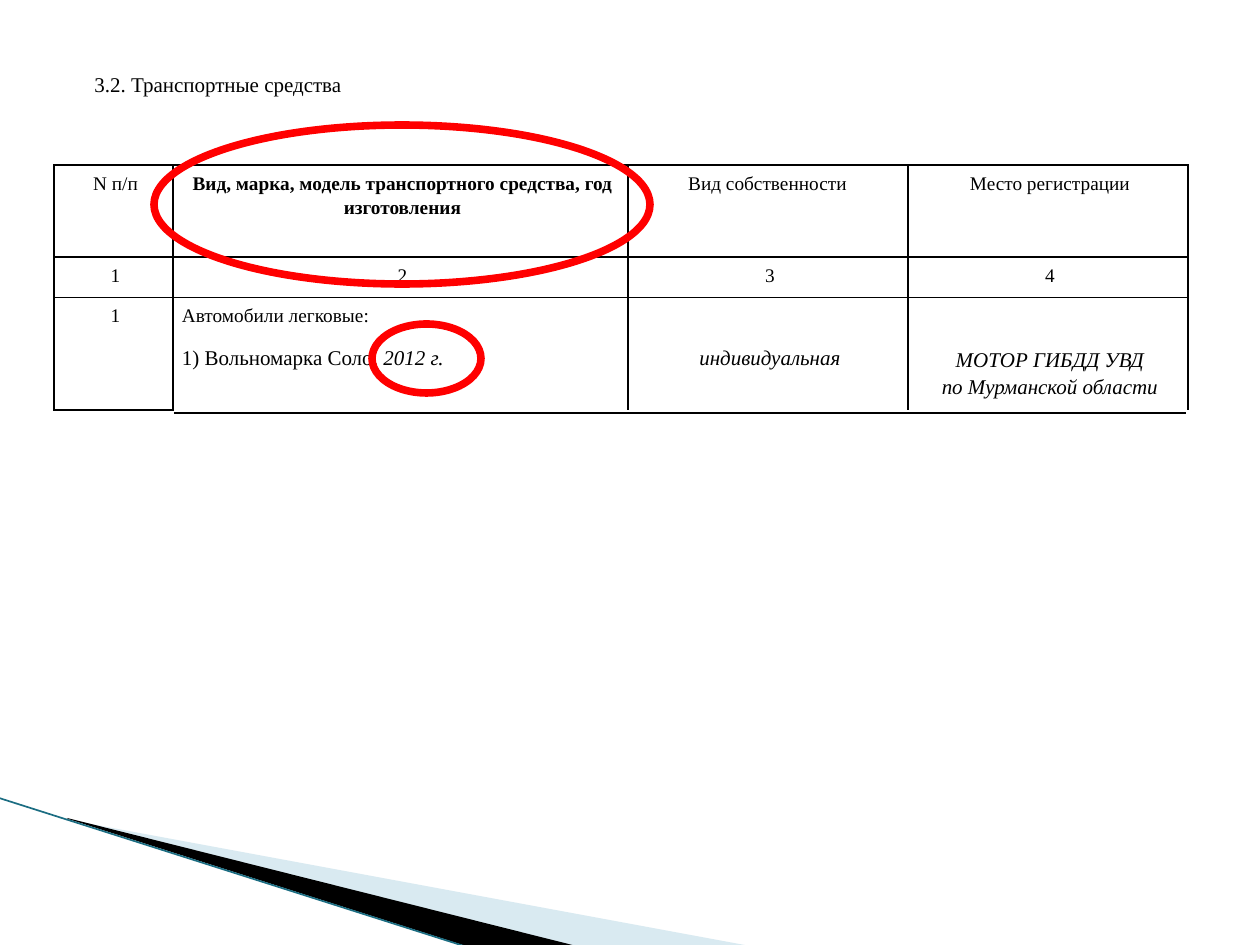
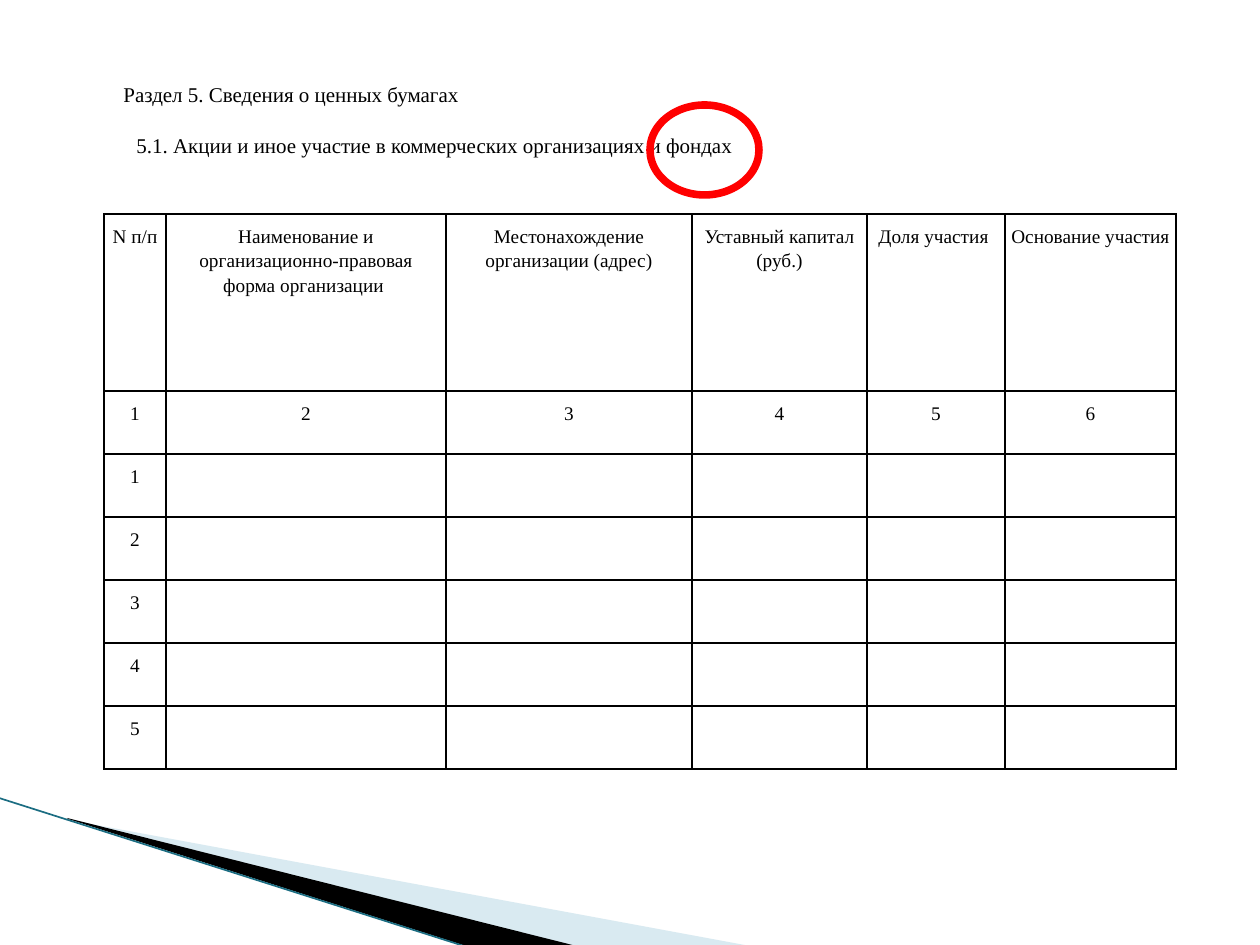
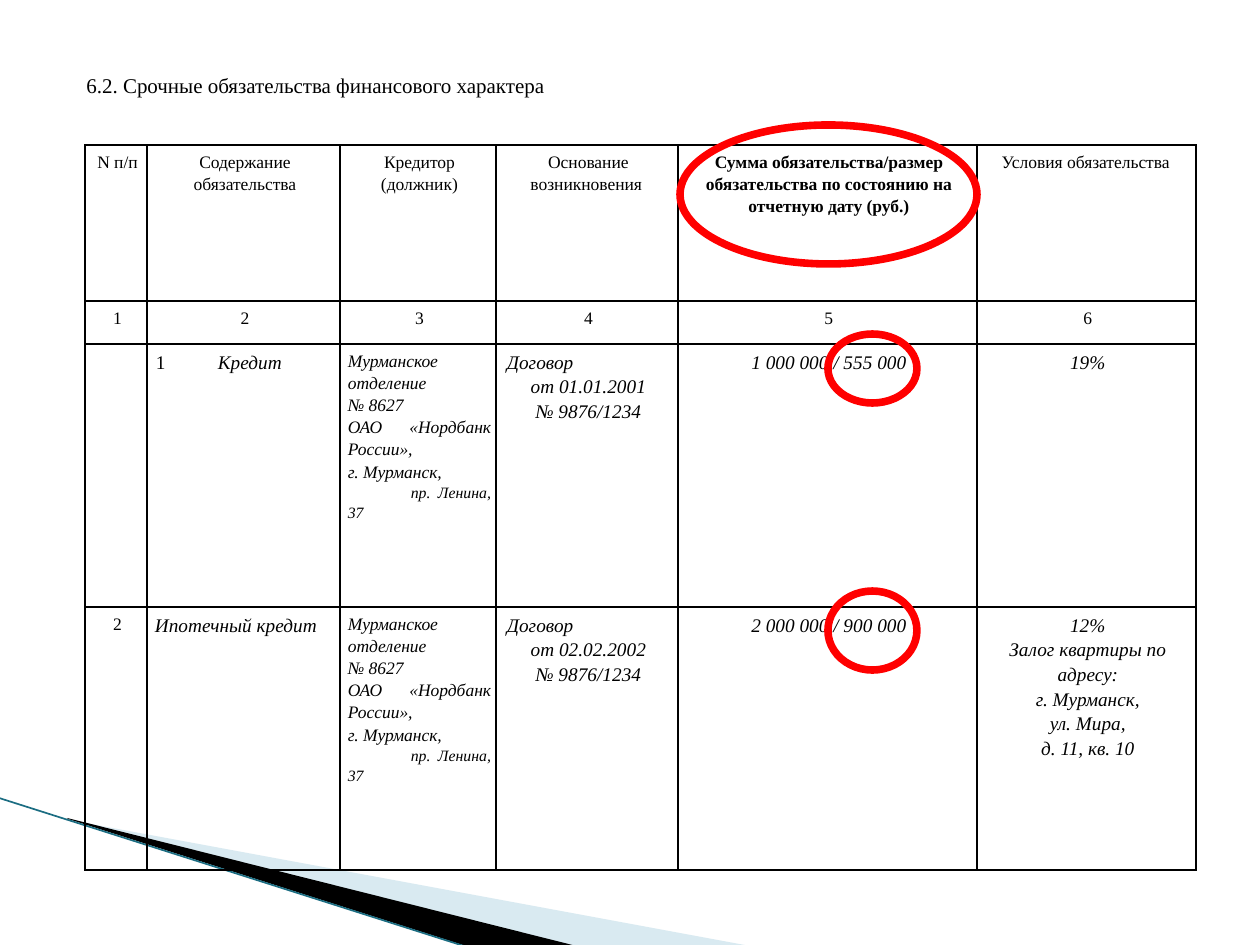
from lxml.etree import SubElement
from pptx import Presentation
from pptx.dml.color import RGBColor
from pptx.enum.shapes import MSO_CONNECTOR as LINK, MSO_SHAPE as SHAPE
from pptx.enum.text import MSO_ANCHOR as ANCHOR, PP_ALIGN as ALIGN
from pptx.oxml.ns import qn
from pptx.util import Emu, Pt

BLACK = RGBColor(0x00, 0x00, 0x00)
RED = RGBColor(0xFF, 0x00, 0x00)
PALE = RGBColor(0xA0, 0xCB, 0xDC)
TEAL = RGBColor(0x1B, 0x6D, 0x82)
FACE = "Times New Roman"
SCALE = 914400 / 126
LEFT, MID, FULL = ALIGN.LEFT, ALIGN.CENTER, ALIGN.JUSTIFY


def px(n):
    return Emu(round(n * SCALE))


def par(*runs, align=MID, dent=0, first=0, before=0):
    """One paragraph; a run is a text or (text, font values)."""
    return dict(runs=runs, align=align, dent=dent, first=first, before=before)


# ---- content ----
BOLD = dict(bold=True)
TILT = dict(italic=True)
TILT11 = dict(italic=True, size=11)
TILT12 = dict(italic=True, size=12)


def tilt(*lines):
    return [par((line, TILT11)) for line in lines]


def deal(date):
    return [par(("Договор", TILT11), align=LEFT, dent=3),
            *tilt(f"от {date}", "№ 9876/1234")]


BANK = [
    *(par((line, TILT), align=FULL) for line in (
        "Мурманское отделение", "№ 8627",
        "ОАО «Нордбанк России»,", "г. Мурманск,")),
    par(("пр. Ленина, 37", dict(italic=True, size=9)), align=FULL, first=63),
]

CARS = dict(
    title=dict(at=(82, 65, 400, 38),
               pars=[par("3.2. Транспортные средства", align=LEFT)]),
    table=dict(
        at=(54, 165), size=11, pad=(9, 5, 5, 9),
        cols=[119, 455, 280, 280], rows=[92, 40, 40, 71],
        cells=[
            ["N п/п",
             [par(("Вид, марка, модель транспортного средства, год "
                   "изготовления", BOLD))],
             "Вид собственности ", "Место регистрации"],
            ["1", "2", "3", "4"],
            ["1", [par("Автомобили легковые:", align=LEFT)], "", ""],
            ["",
             [par(("1) Вольномарка Соло", dict(size=12)),
                  (", 2012 г.", TILT12), align=LEFT)],
             [par(("индивидуальная", TILT12))],
             [par(("МОТОР ГИБДД УВД", TILT12)),
              par(("по Мурманской области", TILT12))]],
        ],
        merge=[(2, 0, 3, 0)], middle=[(3, 3)],
        sides={(r, c): side for c in (1, 2, 3)
               for r, side in ((2, "LRT"), (3, "LR"))}),
    rule=(174, 413, 1186, 413),
    rings=[(154, 125, 496, 159), (372, 324, 109, 69)],
)

SHARES = dict(
    title=dict(at=(111, 75, 778, 88), pars=[
        par("Раздел 5. Сведения о ценных бумагах", align=FULL),
        par("5.1. Акции и иное участие в коммерческих организациях и фондах",
            align=FULL, dent=13, before=15)]),
    table=dict(
        at=(104, 214), size=11, pad=(5, 9, 5, 9),
        cols=[62, 280, 246, 175, 138, 171], rows=[177] + [63] * 6,
        cells=[
            ["N п/п", "Наименование и организационно-правовая форма организации ",
             "Местонахождение организации (адрес)",
             "Уставный капитал (руб.)", "Доля участия ",
             "Основание участия "],
            list("123456"),
            *([n] + [""] * 5 for n in "12345"),
        ]),
    rings=[(650, 105, 109, 90)],
)

DEBTS = dict(
    title=dict(at=(74, 66, 630, 38), pars=[
        par("6.2. Срочные обязательства финансового характера", align=LEFT)]),
    table=dict(
        at=(85, 145), size=10, pad=(8, 5, 5, 8),
        cols=[62, 193, 156, 182, 299, 219], rows=[156, 43, 263, 263],
        cells=[
            ["N п/п", "Содержание обязательства", "Кредитор (должник)",
             "Основание возникновения ",
             [par(("Сумма обязательства/размер обязательства по состоянию на "
                   "отчетную дату (руб.)", BOLD))],
             "Условия обязательства "],
            list("123456"),
            [[par(("1", dict(size=11)), align=LEFT, first=63)],
             [par(("Кредит", TILT11), align=LEFT, first=63)],
             BANK, deal("01.01.2001"), tilt("1 000 000 / 555 000"),
             tilt("19%")],
            ["2", [par(("Ипотечный кредит", TILT11), align=LEFT)],
             BANK, deal("02.02.2002"), tilt("2 000 000 / 900 000"),
             tilt("12%", "Залог квартиры по адресу:", "г. Мурманск,",
                  "ул. Мира,", "д. 11, кв. 10")],
        ]),
    rings=[(680, 125, 297, 139), (828, 334, 89, 69), (828, 591, 89, 79)],
)

# Corner bands: points, colour, opacity in percent
BANDS = [
    ([(69, 820), (750, 946), (575, 946), (69, 819)], PALE, 40),
    ([(67, 818), (576, 946), (469, 947), (68, 819)], BLACK, 100),
]
EDGE = (-1, 798, 467, 947)


# ---- drawing ----
def add_line(slide, ends, color, width):
    line = slide.shapes.add_connector(LINK.STRAIGHT, *map(px, ends))
    line.line.color.rgb = color
    line.line.width = Pt(width)
    SubElement(line._element.spPr, qn("a:effectLst"))


def add_bands(slide):
    for points, color, alpha in BANDS:
        pen = slide.shapes.build_freeform(*points[0], scale=SCALE)
        pen.add_line_segments(points[1:], close=True)
        band = pen.convert_to_shape()
        band.shadow.inherit = False
        band.line.fill.background()
        band.fill.solid()
        band.fill.fore_color.rgb = color
        if alpha < 100:
            tone = band._element.spPr.find(f".//{qn('a:srgbClr')}")
            SubElement(tone, qn("a:alpha"), val=str(alpha * 1000))
    add_line(slide, EDGE, TEAL, 0.95)


def write(frame, pars, size, gap=1.0):
    for i, item in enumerate(pars):
        p = frame.paragraphs[0] if i == 0 else frame.add_paragraph()
        p.alignment, p.line_spacing = item["align"], gap
        if item["before"]:
            p.space_before = Pt(item["before"])
        pr = p._p.get_or_add_pPr()
        pr.set("marL", str(px(item["dent"])))
        pr.set("indent", str(px(item["first"])))
        for run in item["runs"]:
            text, look = (run, {}) if isinstance(run, str) else run
            r = p.add_run()
            r.text = text
            r.font.color.rgb = BLACK
            base = dict(name=FACE, size=size, bold=False, italic=False)
            for key, value in (base | look).items():
                setattr(r.font, key, Pt(value) if key == "size" else value)


def add_title(slide, at, pars):
    box = slide.shapes.add_textbox(*map(px, at))
    box.text_frame.word_wrap = True
    write(box.text_frame, pars, 12)


def set_edges(cell, sides):
    """Draws the named sides of a cell and hides the rest."""
    pr = cell._tc.get_or_add_tcPr()
    for side in "LRTB":
        edge = SubElement(pr, qn(f"a:ln{side}"), w=str(Pt(1)))
        if side in sides:
            fill = SubElement(edge, qn("a:solidFill"))
            SubElement(fill, qn("a:srgbClr"), val=str(BLACK))
        else:
            SubElement(edge, qn("a:noFill"))


def add_grid(slide, at, size, pad, cols, rows, cells,
             merge=(), middle=(), sides={}):
    area = (*at, sum(cols), sum(rows))
    table = slide.shapes.add_table(
        len(rows), len(cols), *map(px, area)).table
    table.first_row = table.horz_banding = False
    for col, width in zip(table.columns, cols):
        col.width = px(width)
    for row, height in zip(table.rows, rows):
        row.height = px(height)
    for r, line in enumerate(cells):
        for c, body in enumerate(line):
            cell = table.cell(r, c)
            set_edges(cell, sides.get((r, c), "LRTB"))
            cell.fill.background()
            for side, gap in zip(("left", "top", "right", "bottom"), pad):
                setattr(cell, f"margin_{side}", px(gap))
            if (r, c) in middle:
                cell.vertical_anchor = ANCHOR.MIDDLE
            if body:
                pars = [par(body)] if isinstance(body, str) else body
                write(cell.text_frame, pars, size, 1.15)
            else:
                p = cell.text_frame.paragraphs[0]._p
                p.get_or_add_endParaRPr().set("sz", str(size * 100))
    for top, left, low, right in merge:
        table.cell(top, left).merge(table.cell(low, right))


def add_ring(slide, at):
    ring = slide.shapes.add_shape(SHAPE.OVAL, *map(px, at))
    ring.shadow.inherit = False
    ring.fill.background()
    ring.line.color.rgb = RED
    ring.line.width = Pt(4.33)


def main():
    deck = Presentation()
    deck.slide_width, deck.slide_height = px(1260), px(945)
    for page in (CARS, SHARES, DEBTS):
        slide = deck.slides.add_slide(deck.slide_layouts[6])
        add_bands(slide)
        add_title(slide, **page["title"])
        add_grid(slide, **page["table"])
        if "rule" in page:
            add_line(slide, page["rule"], BLACK, 0.75)
        for at in page["rings"]:
            add_ring(slide, at)
    deck.save("out.pptx")


if __name__ == "__main__":
    main()
